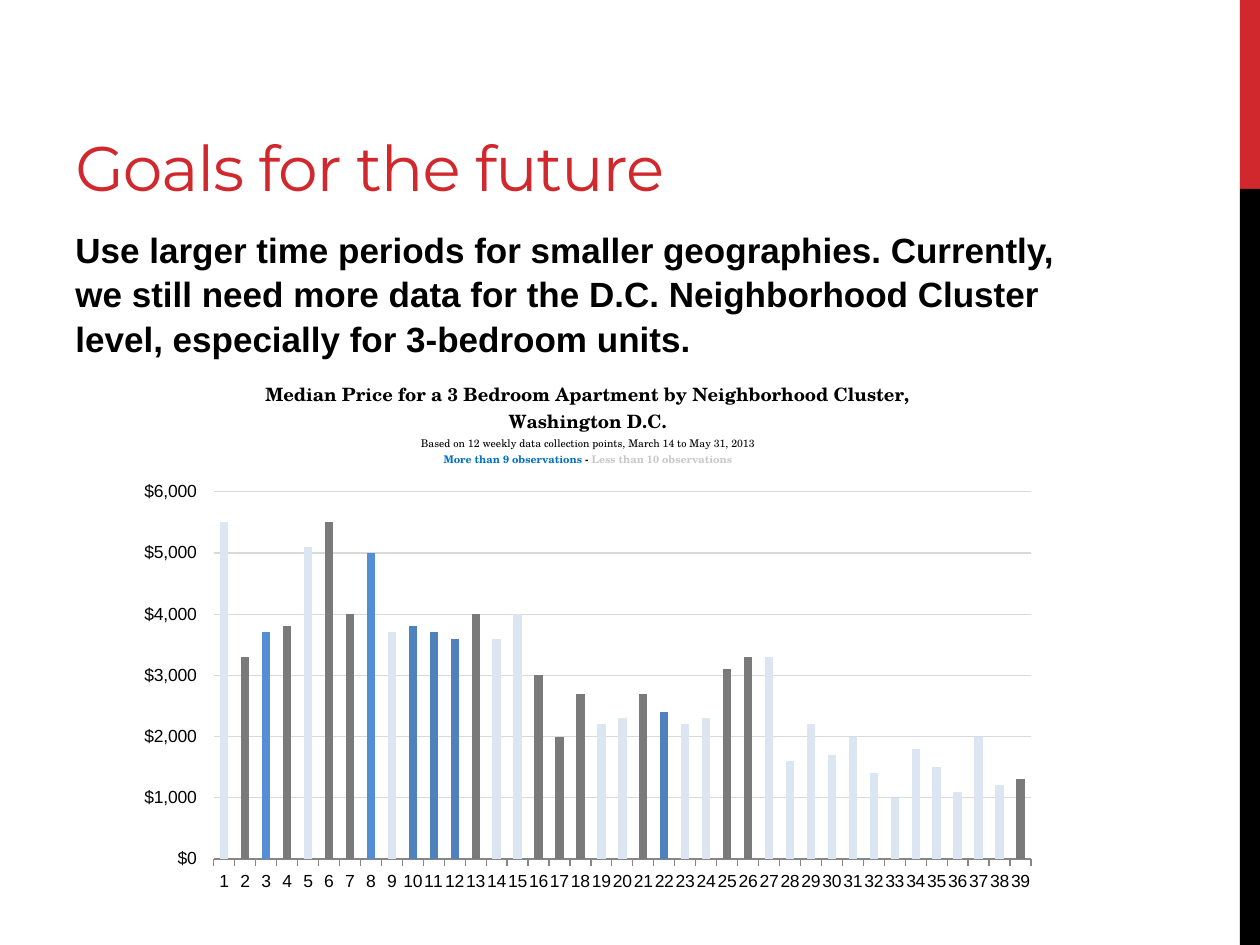
import pptx
import pptx.util
import pptx.chart.data
import pptx.enum.chart
import pptx.enum.shapes
import pptx.enum.text
from lxml import etree
from pptx.dml.color import RGBColor
from pptx.util import Inches, Pt

RED = RGBColor(0xD1, 0x28, 0x2E)
BLACK = RGBColor(0, 0, 0)
GRAY = RGBColor(0x7A, 0x7A, 0x7A)
PALE = RGBColor(0xDC, 0xE6, 0xF2)
BRIGHT_BLUE = RGBColor(0x55, 0x8E, 0xD5)
BLUE = RGBColor(0x4F, 0x81, 0xBD)
GRID = RGBColor(0xD9, 0xD9, 0xD9)
AXIS = RGBColor(0x86, 0x86, 0x86)
LEGEND_BLUE = RGBColor(0x00, 0x70, 0xC0)
LEGEND_GRAY = RGBColor(0xC8, 0xC8, 0xC8)

# Content
TITLE = "Goals for the future"
MESSAGE = ("Use larger time periods for smaller geographies. Currently, we still need "
           "more data for the D.C. Neighborhood Cluster level, especially for "
           "3-bedroom units.")
# Each line is a list of runs: text, size, bold, colour
CHART_TITLE = [
    [("Median Price for a 3 Bedroom Apartment by Neighborhood Cluster, Washington D.C.",
      10.5, True, BLACK)],
    [("Based on 12 weekly data collection points, March 14 to May 31, 2013",
      6, False, BLACK)],
    [("More than 9 observations", 6, True, LEGEND_BLUE),
     (" - ", 6, True, BLACK),
     ("Less than 10 observations", 6, True, LEGEND_GRAY)],
]
PRICES = [5500, 3300, 3700, 3800, 5100, 5500, 4000, 5000, 3700, 3800,
          3700, 3600, 4000, 3600, 4000, 3000, 2000, 2700, 2200, 2300,
          2700, 2400, 2200, 2300, 3100, 3300, 3300, 1600, 2200, 1700,
          2000, 1400, 1000, 1800, 1500, 1100, 2000, 1200, 1300]
CLUSTER_COLORS = [
    (PALE, [1, 5, 9, 14, 15, 19, 20, 23, 24, *range(27, 39)]),
    (BRIGHT_BLUE, [3, 8]),
    (BLUE, [10, 11, 12, 22]),
]
SIDE_BARS = [(0, 1.5, RED), (1.5, 6, BLACK)]
PLOT_LAYOUT = {"layoutTarget": "inner", "xMode": "edge", "yMode": "edge",
               "x": 0.095, "y": 0.248, "w": 0.885, "h": 0.673}


def set_font(font, color, **values):
    for name, value in values.items():
        setattr(font, name, value)
    font.color.rgb = color


def add_text(slide, text, box, anchor, color, **values):
    frame = slide.shapes.add_textbox(*map(Inches, box)).text_frame
    frame.word_wrap = True
    frame.vertical_anchor = anchor
    paragraph = frame.paragraphs[0]
    run = paragraph.add_run()
    run.text = text
    set_font(run.font, color, **values)
    return paragraph


def add_chart_xml(parent, tag):
    return etree.SubElement(parent, pptx.oxml.ns.qn(f"c:{tag}"))


presentation = pptx.Presentation()
presentation.slide_width, presentation.slide_height = Inches(10), Inches(7.5)
slide = presentation.slides.add_slide(presentation.slide_layouts[6])

# Bars on the right edge
for top, height, color in SIDE_BARS:
    bar = slide.shapes.add_shape(pptx.enum.shapes.MSO_SHAPE.RECTANGLE, Inches(9.84),
                                 Inches(top), Inches(0.16), Inches(height))
    bar.shadow.inherit = False
    bar.fill.solid()
    bar.fill.fore_color.rgb = color
    bar.line.fill.background()

# Message and title
ANCHOR = pptx.enum.text.MSO_ANCHOR
message = add_text(slide, MESSAGE, (0.5, 1.75, 8.25, 1.08), ANCHOR.TOP, BLACK,
                   name="Arial", size=Pt(20), bold=True)
message.line_spacing = 1.05
title = add_text(slide, TITLE, (0.5, 0.17, 8, 1.5), ANCHOR.BOTTOM, RED,
                 name="Montserrat", size=Pt(36))
title.runs[0].font._element.set("spc", "-60")

# Column chart
data = pptx.chart.data.CategoryChartData()
data.categories = [str(number) for number in range(1, len(PRICES) + 1)]
data.add_series("Series 1", PRICES)
chart = slide.shapes.add_chart(
    pptx.enum.chart.XL_CHART_TYPE.COLUMN_CLUSTERED,
    Inches(1), Inches(2.83), Inches(7.33), Inches(4.33), data).chart
chart.has_legend = False
set_font(chart.font, BLACK, name="Arial", size=Pt(10))

plot = chart.plots[0]
plot.gap_width = 150
plot.vary_by_categories = False
series = plot.series[0]
series.format.fill.solid()
series.format.fill.fore_color.rgb = GRAY
for color, clusters in CLUSTER_COLORS:
    for cluster in clusters:
        fill = series.points[cluster - 1].format.fill
        fill.solid()
        fill.fore_color.rgb = color

# Chart title
frame = chart.chart_title.text_frame
for index, line in enumerate(CHART_TITLE):
    paragraph = frame.add_paragraph() if index else frame.paragraphs[0]
    for text, size, bold, color in line:
        run = paragraph.add_run()
        run.text = text
        set_font(run.font, color, name="TeX Gyre Schola", size=Pt(size), bold=bold)
chart.chart_title.include_in_layout = False

# Axes
TICK = pptx.enum.chart.XL_TICK_MARK
category_axis, value_axis = chart.category_axis, chart.value_axis
category_axis.major_tick_mark = TICK.OUTSIDE
category_axis.format.line.color.rgb = AXIS
category_axis.format.line.width = Pt(0.75)
skip = add_chart_xml(category_axis._element, "tickLblSkip")
skip.set("val", "1")
category_axis._element.find(pptx.oxml.ns.qn("c:noMultiLvlLbl")).addprevious(skip)

value_axis.minimum_scale, value_axis.maximum_scale = 0, 6000
value_axis.major_unit = 1000
value_axis.major_tick_mark = TICK.OUTSIDE
value_axis.format.line.fill.background()
value_axis.major_gridlines.format.line.color.rgb = GRID
value_axis.major_gridlines.format.line.width = Pt(0.75)
value_axis.tick_labels.number_format = '"$"#,##0_);[Red]\\("$"#,##0\\)'
value_axis.tick_labels.number_format_is_linked = False

# Fixed plot area
plot_area = chart._chartSpace.chart.plotArea
for old_layout in plot_area.findall(pptx.oxml.ns.qn("c:layout")):
    plot_area.remove(old_layout)
layout = add_chart_xml(plot_area, "layout")
plot_area.insert(0, layout)
manual = add_chart_xml(layout, "manualLayout")
for tag, value in PLOT_LAYOUT.items():
    add_chart_xml(manual, tag).set("val", str(value))

presentation.save("out.pptx")
